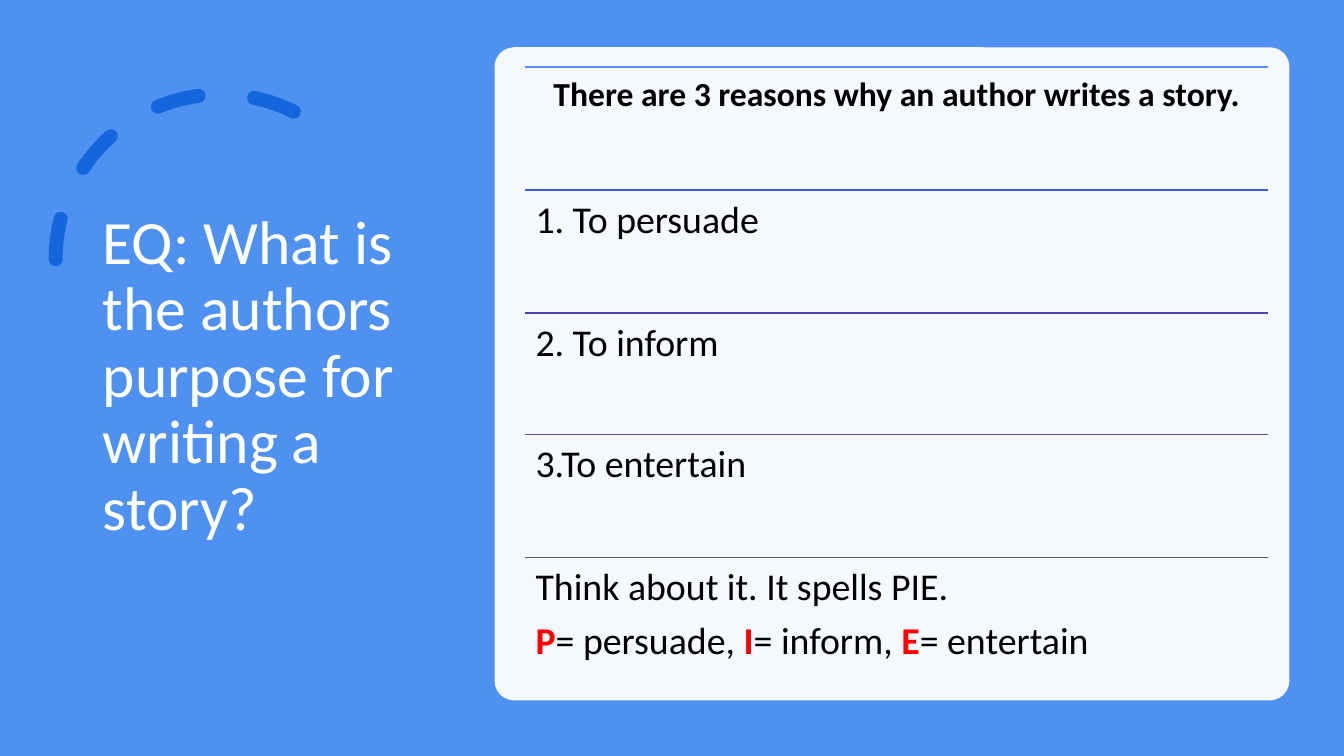
from pptx import Presentation
from pptx.dml.color import RGBColor
from pptx.enum.dml import MSO_LINE
from pptx.enum.shapes import MSO_CONNECTOR, MSO_SHAPE
from pptx.enum.text import MSO_ANCHOR, PP_ALIGN
from pptx.oxml.ns import qn
from pptx.util import Pt
from lxml import etree

PX = 9525  # EMU per px, 96 px to the inch
RECT, ROUND_RECT, ARC = MSO_SHAPE.RECTANGLE, MSO_SHAPE.ROUNDED_RECTANGLE, MSO_SHAPE.ARC
STRAIGHT, DASH = MSO_CONNECTOR.STRAIGHT, MSO_LINE.DASH
TOP, MIDDLE = MSO_ANCHOR.TOP, MSO_ANCHOR.MIDDLE
LEFT, CENTER = PP_ALIGN.LEFT, PP_ALIGN.CENTER

FONT = "Calibri"
COLORS = {
    "blue": "4E91F0",
    "arc": "1366DC",
    "white": "FFFFFF",
    "black": "000000",
    "red": "FF0000",
}
RULES = ["4E91F0", "435AD8", "5043B5", "644E87", "5B5260"]

# Each row is a list of paragraphs, each paragraph a list of (text, bold, color)
ROWS = [
    [[("There are 3 reasons why an author writes a story.", True, "black")]],
    [[("1. To persuade", False, "black")]],
    [[("2. To inform", False, "black")]],
    [[("3.To entertain", False, "black")]],
    [
        [("Think about it. It spells PIE.", False, "black")],
        [
            ("P", True, "red"), ("= persuade, ", False, "black"),
            ("I", True, "red"), ("= inform, ", False, "black"),
            ("E", True, "red"), ("= entertain", False, "black"),
        ],
    ],
]
ROW_LEFT, ROW_TOP, ROW_WIDTH, ROWS_HEIGHT = 500, 64, 708, 584


def add_filled(kind, x, y, w, h, color):
    sp = s.shapes.add_shape(kind, x * PX, y * PX, w * PX, h * PX)
    sp.shadow.inherit = False
    sp.fill.solid()
    sp.fill.fore_color.rgb = RGBColor.from_string(COLORS[color])
    sp.line.fill.background()
    return sp


def add_text(box, paragraphs, size, align=LEFT, anchor=TOP, after=0):
    """Add a wrapped text box; box is left, top, width, height in px."""
    tf = s.shapes.add_textbox(*(v * PX for v in box)).text_frame
    frame = {"word_wrap": True, "vertical_anchor": anchor}
    frame.update({f"margin_{side}": 10 * PX for side in ("left", "top", "right", "bottom")})
    for name, value in frame.items():
        setattr(tf, name, value)
    for i, runs in enumerate(paragraphs):
        p = tf.add_paragraph() if i else tf.paragraphs[0]
        for name, value in {"alignment": align, "line_spacing": 0.9, "space_after": Pt(after)}.items():
            setattr(p, name, value)
        for text, bold, color in runs:
            r = p.add_run()
            r.text = text
            for name, value in {"name": FONT, "size": Pt(size), "bold": bold}.items():
                setattr(r.font, name, value)
            r.font.color.rgb = RGBColor.from_string(COLORS[color])


prs = Presentation()
prs.slide_width, prs.slide_height = 1280 * PX, 720 * PX
s = prs.slides.add_slide(prs.slide_layouts[6])

add_filled(RECT, 0, 0, 1280, 720, "blue")

# Dashed arc, mirrored, with round dash ends
arc = s.shapes.add_shape(ARC, 53 * PX, 90 * PX, 314 * PX, 314 * PX)
arc.shadow.inherit = False
arc.adjustments[0] = 146.13
arc.fill.background()
arc.line.color.rgb = RGBColor.from_string(COLORS["arc"])
arc.line.width = Pt(10)
arc.line.dash_style = DASH
arc.line._get_or_add_ln().set("cap", "rnd")
arc._element.spPr.find(qn("a:xfrm")).set("flipH", "1")

question = "EQ: What is the authors purpose for writing a story?"
add_text((88, 67, 310, 585), [[(question, False, "white")]], 44, anchor=MIDDLE)

# Slightly transparent card
card = add_filled(ROUND_RECT, 471, 45, 757, 622, "white")
card.adjustments[0] = 0.03
fill_color = card._element.spPr.find(qn("a:solidFill"))[0]
etree.SubElement(fill_color, qn("a:alpha")).set("val", "95000")

# Ruled rows
row_height = ROWS_HEIGHT / len(ROWS)
for i, (rule, paragraphs) in enumerate(zip(RULES, ROWS)):
    y = ROW_TOP + round(i * row_height)
    line = s.shapes.add_connector(
        STRAIGHT, ROW_LEFT * PX, y * PX, (ROW_LEFT + ROW_WIDTH) * PX, y * PX)
    line.line.color.rgb = RGBColor.from_string(rule)
    line.line.width = Pt(1)
    etree.SubElement(line._element.spPr, qn("a:effectLst"))
    size, align = (27, LEFT) if i else (24, CENTER)
    add_text((ROW_LEFT, y, ROW_WIDTH, round(row_height)), paragraphs, size, align, after=9.5)

prs.save("out.pptx")
